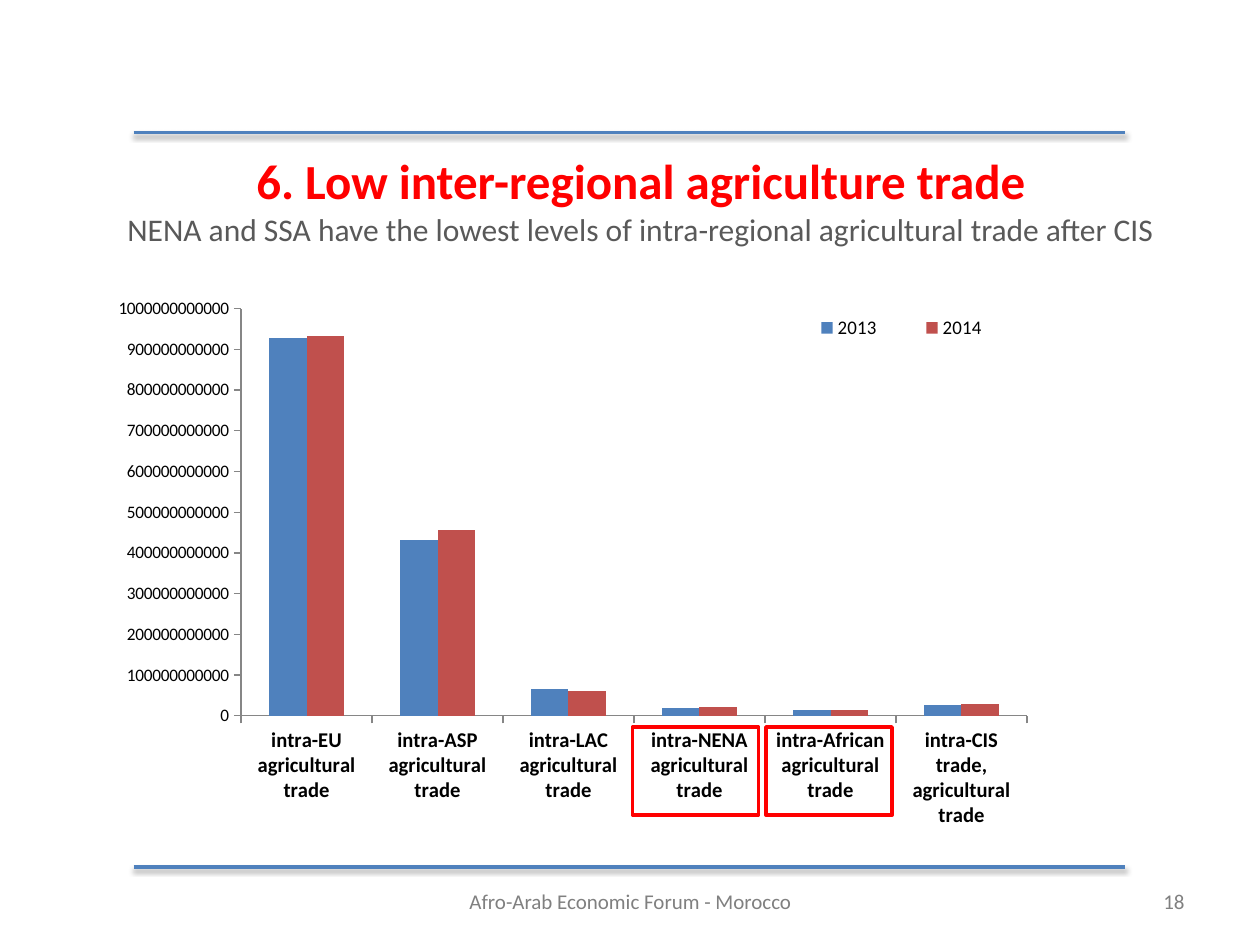
from pptx import Presentation
from pptx.chart.data import CategoryChartData as Data
from pptx.dml.color import RGBColor as Rgb
from pptx.enum.chart import XL_CHART_TYPE as Kind, XL_LEGEND_POSITION as Side, XL_TICK_MARK as Tick
from pptx.enum.shapes import MSO_CONNECTOR as Link, MSO_SHAPE as Form
from pptx.enum.text import MSO_ANCHOR as Anchor, PP_ALIGN as Align
from pptx.oxml import parse_xml
from pptx.oxml.ns import nsdecls, qn
from pptx.util import Inches, Pt

RED = Rgb(0xFF, 0, 0)
BLUE = Rgb(0x4F, 0x81, 0xBD)
BRICK = Rgb(0xC0, 0x50, 0x4D)
DARK = Rgb(0x59, 0x59, 0x59)
GRAY = Rgb(0x80, 0x80, 0x80)
AXIS = Rgb(0x86, 0x86, 0x86)
BLACK = Rgb(0, 0, 0)
FACE = "Calibri"
BILLION = 10**9

TITLE = [
    ("6. Low inter-regional agriculture trade", 28, RED, True),
    ("NENA and SSA have the lowest levels of intra-regional agricultural trade after CIS", 18, DARK, False),
]
GROUPS = ["intra-EU", "intra-ASP", "intra-LAC", "intra-NENA", "intra-African", "intra-CIS trade,"]
SERIES = [
    ("2013", BLUE, [927, 431, 65, 20, 14, 27]),
    ("2014", BRICK, [932, 456, 61, 22, 15, 30]),
]
FOOTER = [
    ("18", 7.17, 2.33, Align.RIGHT),
    ("Afro-Arab Economic Forum - Morocco", 3.42, 3.17, Align.CENTER),
]
RULES = [1.05, 6.88]
FRAMES = [5.02, 6.08]


def style(font, size, color, bold=False):
    font.name, font.size, font.bold = FACE, Pt(size), bold
    font.color.rgb = color


def write(para, text, size, color, bold=False, align=Align.CENTER):
    para.alignment = align
    run = para.add_run()
    run.text = text
    style(run.font, size, color, bold)


def place(node, index, box, inner=False):
    old = node.find(qn("c:layout"))
    if old is not None:
        node.remove(old)
    target = '<c:layoutTarget val="inner"/>' if inner else ""
    modes = "".join(f'<c:{k}Mode val="edge"/>' for k in "xy")
    sizes = "".join(f'<c:{k} val="{v}"/>' for k, v in zip("xywh", box))
    node.insert(index, parse_xml(
        f'<c:layout {nsdecls("c")}><c:manualLayout>{target}{modes}{sizes}</c:manualLayout></c:layout>'))


def draw_rule(slide, y):
    rule = slide.shapes.add_connector(Link.STRAIGHT, Inches(1.06), Inches(y), Inches(8.93), Inches(y))
    rule.line.color.rgb, rule.line.width = BLUE, Pt(2)
    rule._element.spPr.append(parse_xml(
        f'<a:effectLst {nsdecls("a")}><a:outerShdw blurRad="{Pt(3.1)}" dist="{Pt(1.6)}" dir="5400000" '
        'rotWithShape="0"><a:srgbClr val="000000"><a:alpha val="38000"/></a:srgbClr>'
        '</a:outerShdw></a:effectLst>'))


def draw_title(slide):
    title = slide.shapes.title
    title.left, title.top, title.width, title.height = map(Inches, (0.5, 0.97, 9.17, 1.02))
    frame = title.text_frame
    frame.word_wrap, frame.vertical_anchor = True, Anchor.MIDDLE
    frame.margin_top, frame.margin_bottom = Inches(0.2), 0
    for i, line in enumerate(TITLE):
        write(frame.add_paragraph() if i else frame.paragraphs[0], *line)


def draw_chart(slide):
    data = Data(number_format="General")
    data.categories = [f"{group} agricultural trade" for group in GROUPS]
    for name, _, vals in SERIES:
        data.add_series(name, [v * BILLION for v in vals])
    box = map(Inches, (0.94, 2.22, 7.98, 4.49))
    chart = slide.shapes.add_chart(Kind.COLUMN_CLUSTERED, *box, data).chart
    chart.has_title = False
    style(chart.font, 10, BLACK)
    plot = chart.plots[0]
    plot.gap_width, plot.overlap, plot.vary_by_categories = 150, 0, False
    for bars, (_, color, _) in zip(plot.series, SERIES):
        bars.format.fill.solid()
        bars.format.fill.fore_color.rgb = color
    cat, val = chart.category_axis, chart.value_axis
    for axis in (cat, val):
        axis.major_tick_mark, axis.minor_tick_mark = Tick.OUTSIDE, Tick.NONE
        axis.has_major_gridlines = False
        axis.format.line.color.rgb = AXIS
    style(cat.tick_labels.font, 12, BLACK, True)
    val.minimum_scale, val.maximum_scale, val.major_unit = 0, 1000 * BILLION, 100 * BILLION
    chart.has_legend = True
    legend = chart.legend
    legend.position, legend.include_in_layout = Side.RIGHT, False
    style(legend.font, 11, BLACK)
    place(legend._element, 1, (0.65, 0.06, 0.25, 0.05))
    place(chart._chartSpace.chart.plotArea, 0, (0.106, 0.051, 0.796, 0.72), True)


def draw_foot(slide, text, x, width, align):
    frame = slide.shapes.add_textbox(Inches(x), Inches(6.95), Inches(width), Inches(0.4)).text_frame
    frame.word_wrap, frame.vertical_anchor = True, Anchor.MIDDLE
    write(frame.paragraphs[0], text, 12, GRAY, align=align)


def draw_frame(slide, x):
    rect = slide.shapes.add_shape(Form.RECTANGLE, Inches(x), Inches(5.77), Inches(1), Inches(0.7))
    rect.shadow.inherit = False
    rect.fill.background()
    rect.line.color.rgb, rect.line.width = RED, Pt(2)


def main():
    deck = Presentation()
    deck.slide_width, deck.slide_height = Inches(10), Inches(7.5)
    slide = deck.slides.add_slide(deck.slide_layouts[5])
    for y in RULES:
        draw_rule(slide, y)
    draw_title(slide)
    draw_chart(slide)
    for item in FOOTER:
        draw_foot(slide, *item)
    for x in FRAMES:
        draw_frame(slide, x)
    deck.save("out.pptx")


if __name__ == "__main__":
    main()
